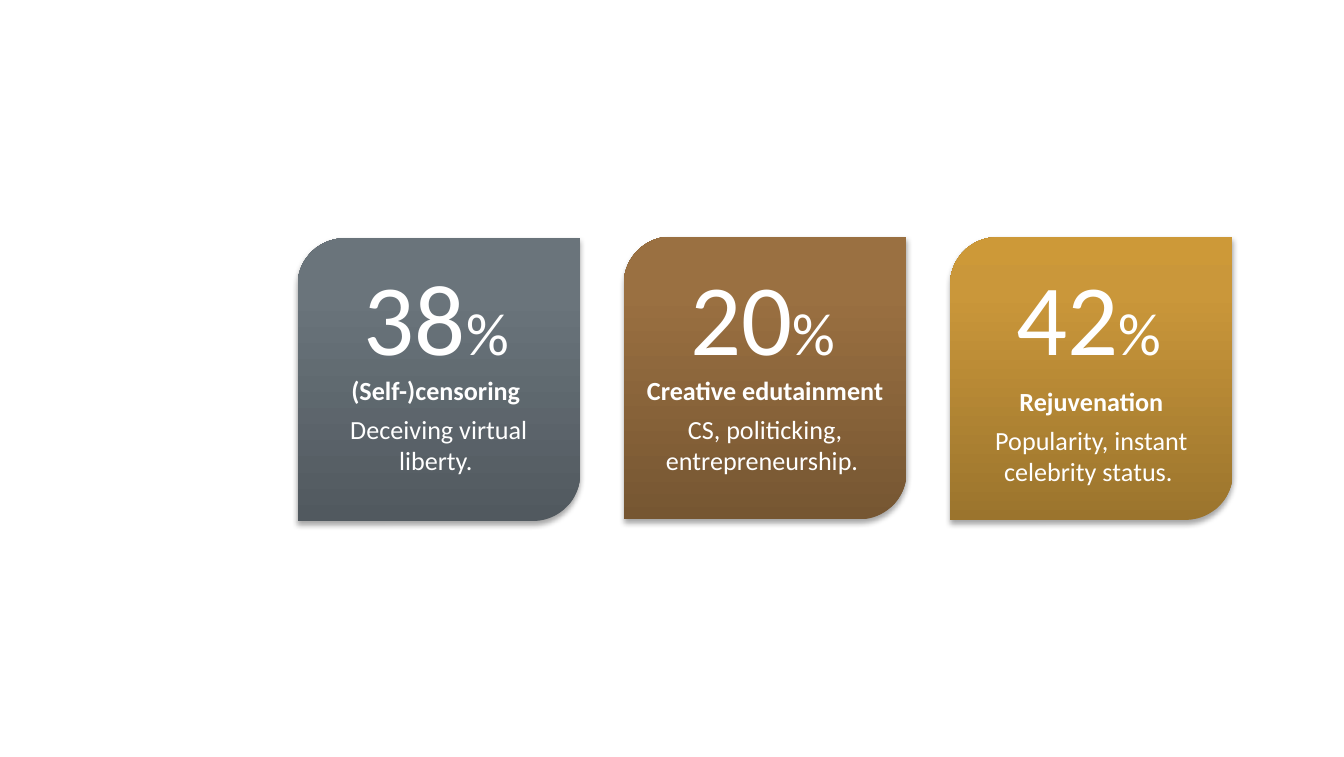
from copy import deepcopy
from dataclasses import dataclass

from lxml import etree
from pptx import Presentation
from pptx.dml.color import RGBColor
from pptx.enum.shapes import MSO_SHAPE
from pptx.enum.text import MSO_AUTO_SIZE, PP_ALIGN
from pptx.oxml.ns import qn
from pptx.util import Pt

CARD_SHAPE = MSO_SHAPE.ROUND_2_DIAG_RECTANGLE
CENTER = PP_ALIGN.CENTER
FIT_SHAPE = MSO_AUTO_SIZE.SHAPE_TO_FIT_TEXT
BLANK_LAYOUT = 6


@dataclass(frozen=True)
class Theme:
    font: str = "Calibri"
    text: RGBColor = RGBColor(0xFF, 0xFF, 0xFF)
    shadow: str = "000000"
    slate: tuple = ("51595F", "6A747B", "6A747C")
    brown: tuple = ("765632", "9A7041", "9C7140")
    gold: tuple = ("9B742D", "CA973A", "CD9938")
    number_size: int = 54
    percent_size: int = 32
    body_size: int = 14


@dataclass(frozen=True)
class Card:
    number: str
    heading: str
    detail: str
    colors: tuple
    top: float
    text_top: float
    number_top: float


THEME = Theme()
CARDS = (
    Card("38", "(Self-)censoring ", "Deceiving virtual liberty. ",
         THEME.slate, 127.6, 200.5, 132.8),
    Card("20", "Creative edutainment", "CS, politicking, entrepreneurship. ",
         THEME.brown, 126.7, 200.5, 132.8),
    Card("42", "Rejuvenation", "Popularity, instant celebrity status. ",
         THEME.gold, 127, 206.3, 133),
)
PAGE_WIDTH, PAGE_HEIGHT = 720, 405.36
FIRST_LEFT, CARD_STEP, CARD_SIZE = 159.4, 174.8, 151.4
STOP_POSITIONS = (0, 0.8, 1)


def style_paragraph(para, size, bold=False):
    para.font.name = THEME.font
    para.font.size = Pt(size)
    para.font.bold = bold
    para.font.color.rgb = THEME.text


def fill_gradient(shape, colors):
    """Fill upwards from the first colour to the last."""
    shape.fill.gradient()
    shape.fill.gradient_angle = 90
    stop_list = shape._element.spPr.find(qn("a:gradFill")).find(qn("a:gsLst"))
    stop_list.append(deepcopy(stop_list[-1]))
    for stop, position, color in zip(shape.fill.gradient_stops, STOP_POSITIONS, colors):
        stop.position = position
        stop.color.rgb = RGBColor.from_string(color)


def add_shadow(shape):
    shape.shadow.inherit = False
    effects = shape._element.spPr.find(qn("a:effectLst"))
    shadow = etree.SubElement(
        effects, qn("a:outerShdw"), blurRad=str(Pt(3.1)), dist=str(Pt(1.8)),
        dir="5400000", rotWithShape="0")
    color = etree.SubElement(shadow, qn("a:srgbClr"), val=THEME.shadow)
    etree.SubElement(color, qn("a:alpha"), val="35000")


def add_panel(group, left, card):
    panel = group.shapes.add_shape(
        CARD_SHAPE, Pt(left), Pt(card.top), Pt(CARD_SIZE), Pt(CARD_SIZE))
    fill_gradient(panel, card.colors)
    panel.line.fill.background()
    add_shadow(panel)


def add_description(group, left, card):
    box = group.shapes.add_textbox(Pt(left + 10.6), Pt(card.text_top), Pt(130.2), Pt(54.7))
    frame = box.text_frame
    frame.word_wrap = True
    frame.auto_size = FIT_SHAPE
    frame.margin_left = frame.margin_right = frame.margin_top = frame.margin_bottom = 0
    heading, detail = frame.paragraphs[0], frame.add_paragraph()
    heading.text, detail.text = card.heading, card.detail
    heading.alignment = detail.alignment = CENTER
    detail.space_before = Pt(4)
    style_paragraph(heading, THEME.body_size, bold=True)
    style_paragraph(detail, THEME.body_size)


def add_percentage(group, left, card):
    box = group.shapes.add_textbox(Pt(left + 28.5), Pt(card.number_top), Pt(92.9), Pt(72.7))
    frame = box.text_frame
    frame.word_wrap = False
    frame.auto_size = FIT_SHAPE
    para = frame.paragraphs[0]
    para.add_run().text = card.number
    percent = para.add_run()
    percent.text = "%"
    style_paragraph(para, THEME.number_size)
    percent.font.size = Pt(THEME.percent_size)


def add_card(page, left, card):
    group = page.shapes.add_group_shape()
    add_panel(group, left, card)
    add_description(group, left, card)
    add_percentage(group, left, card)


def main():
    deck = Presentation()
    deck.slide_width, deck.slide_height = Pt(PAGE_WIDTH), Pt(PAGE_HEIGHT)
    page = deck.slides.add_slide(deck.slide_layouts[BLANK_LAYOUT])
    for index, card in enumerate(CARDS):
        add_card(page, FIRST_LEFT + index * CARD_STEP, card)
    deck.save("out.pptx")


if __name__ == "__main__":
    main()
